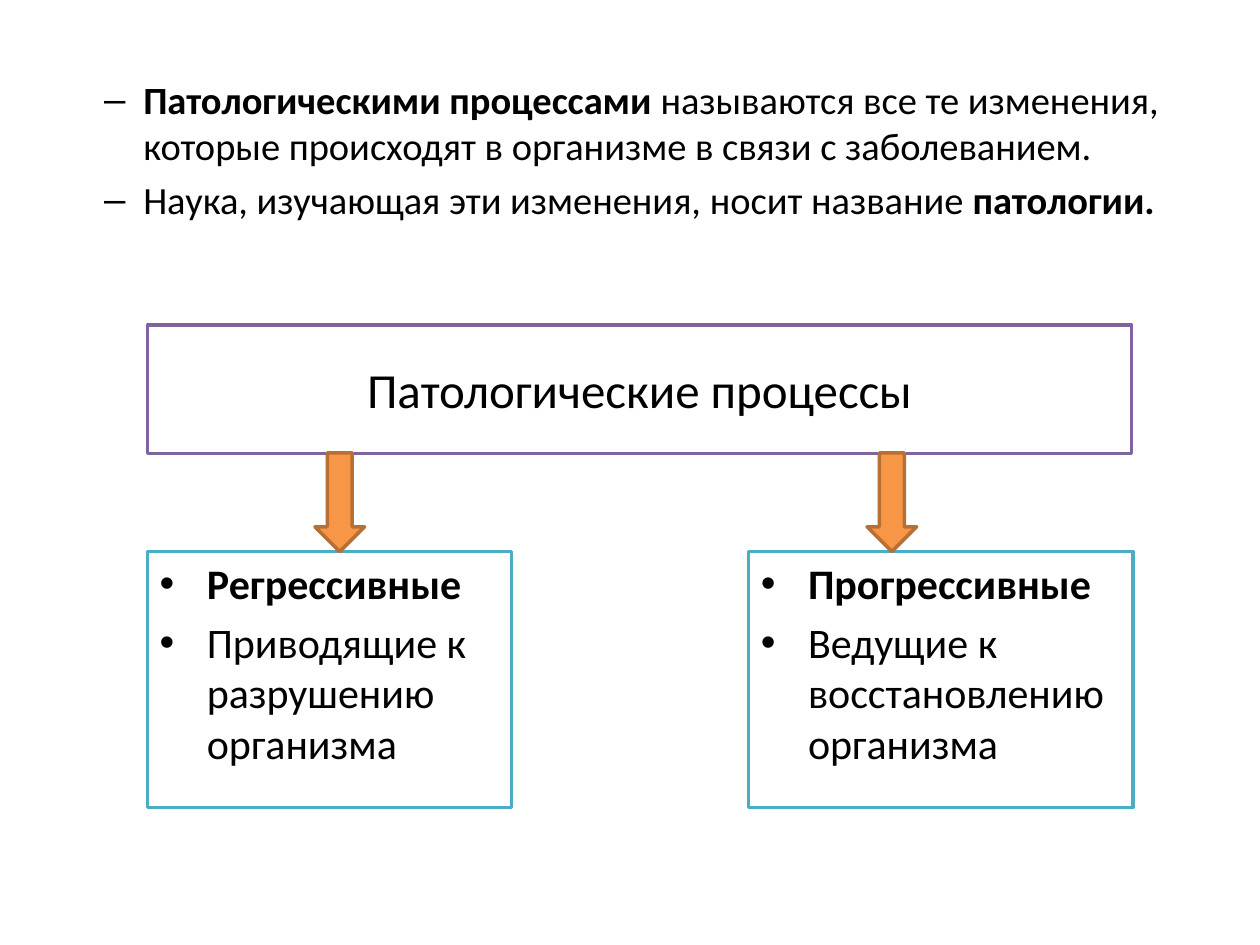
from lxml import etree
from pptx import Presentation
from pptx.dml.color import RGBColor
from pptx.enum.shapes import MSO_SHAPE
from pptx.enum.text import MSO_ANCHOR, PP_ALIGN
from pptx.oxml.ns import qn
from pptx.util import Cm, Pt

RECTANGLE, DOWN_ARROW = MSO_SHAPE.RECTANGLE, MSO_SHAPE.DOWN_ARROW
TOP, MIDDLE = MSO_ANCHOR.TOP, MSO_ANCHOR.MIDDLE
LEFT, CENTER = PP_ALIGN.LEFT, PP_ALIGN.CENTER
FONT = "Calibri"
BLACK, WHITE = "000000", "FFFFFF"
PURPLE, TEAL, ORANGE, BROWN = "8064A2", "4BACC6", "F79646", "B76F34"
GROUP_TOP, ARROW_TOP = 11.12, 9.13

DEFINITIONS = [
    [("Патологическими процессами ", True),
     ("называются все те изменения, которые происходят в организме "
      "в связи с заболеванием.", False)],
    [("Наука, изучающая эти изменения, носит название ", False),
     ("патологии.", True)],
]
GROUPS = [
    (2.97, 7.34, 6.35, "Регрессивные", "Приводящие к разрушению организма"),
    (15.09, 7.75, 17.48, "Прогрессивные", "Ведущие к восстановлению организма"),
]


def color(hex_code):
    """Return the colour for a hex string."""
    return RGBColor.from_string(hex_code)


def paint(shape, fill, line):
    """Give a shape a solid fill and a 2 pt outline."""
    shape.fill.solid()
    shape.fill.fore_color.rgb = color(fill)
    shape.line.color.rgb = color(line)
    shape.line.width = Pt(2)


def add_run(paragraph, text, size, bold=False):
    """Append one formatted run to a paragraph."""
    run = paragraph.add_run()
    run.text = text
    run.font.name = FONT
    run.font.size = Pt(size)
    run.font.bold = bold
    run.font.color.rgb = color(BLACK)


def set_bullet(paragraph, mark, margin, hanging):
    """Give a paragraph a bullet character with a hanging indent."""
    properties = paragraph._p.get_or_add_pPr()
    properties.set("marL", str(Cm(margin)))
    properties.set("indent", str(-Cm(hanging)))
    etree.SubElement(properties, qn("a:buFont"), typeface="Arial")
    etree.SubElement(properties, qn("a:buChar"), char=mark)


def fill_list(frame, items, size, mark, margin, hanging):
    """Write bulleted paragraphs made of (text, bold) runs."""
    frame.word_wrap = True
    frame.vertical_anchor = TOP
    for index, runs in enumerate(items):
        paragraph = frame.add_paragraph() if index else frame.paragraphs[0]
        paragraph.alignment = LEFT
        set_bullet(paragraph, mark, margin, hanging)
        paragraph.space_before = Pt(size * 0.2 if index else 0)
        for text, bold in runs:
            add_run(paragraph, text, size, bold)


def add_heading(slide):
    """Place the framed title."""
    title = slide.shapes.title
    title.left, title.top, title.width, title.height = (
        Cm(2.97), Cm(6.55), Cm(19.84), Cm(2.59))
    paint(title, WHITE, PURPLE)
    title.text_frame.vertical_anchor = MIDDLE
    paragraph = title.text_frame.paragraphs[0]
    paragraph.alignment = CENTER
    add_run(paragraph, "Патологические процессы", 28)


def add_definitions(slide):
    """Add the dashed list of definitions."""
    box = slide.shapes.add_textbox(Cm(0.58), Cm(1.4), Cm(24.2), Cm(4.57))
    fill_list(box.text_frame, DEFINITIONS, 22, "–", 2.06, 0.79)


def add_shape(slide, kind, left, top, width, height, fill, line):
    """Add a painted preset shape without shadow."""
    shape = slide.shapes.add_shape(
        kind, Cm(left), Cm(top), Cm(width), Cm(height))
    shape.shadow.inherit = False
    paint(shape, fill, line)
    return shape


def add_group(slide, left, width, arrow_left, name, effect):
    """Add one kind of process and the arrow leading to it."""
    box = add_shape(slide, RECTANGLE, left, GROUP_TOP, width, 5.16, WHITE, TEAL)
    fill_list(box.text_frame, [[(name, True)], [(effect, False)]],
              24, "•", 0.95, 0.95)
    add_shape(slide, DOWN_ARROW, arrow_left, ARROW_TOP,
              1, GROUP_TOP - ARROW_TOP, ORANGE, BROWN)


def main():
    """Build and save the slide."""
    presentation = Presentation()
    presentation.slide_width, presentation.slide_height = Cm(25.4), Cm(19.05)
    slide = presentation.slides.add_slide(presentation.slide_layouts[5])
    add_heading(slide)
    add_definitions(slide)
    for group in GROUPS:
        add_group(slide, *group)
    presentation.save("out.pptx")


if __name__ == "__main__":
    main()
